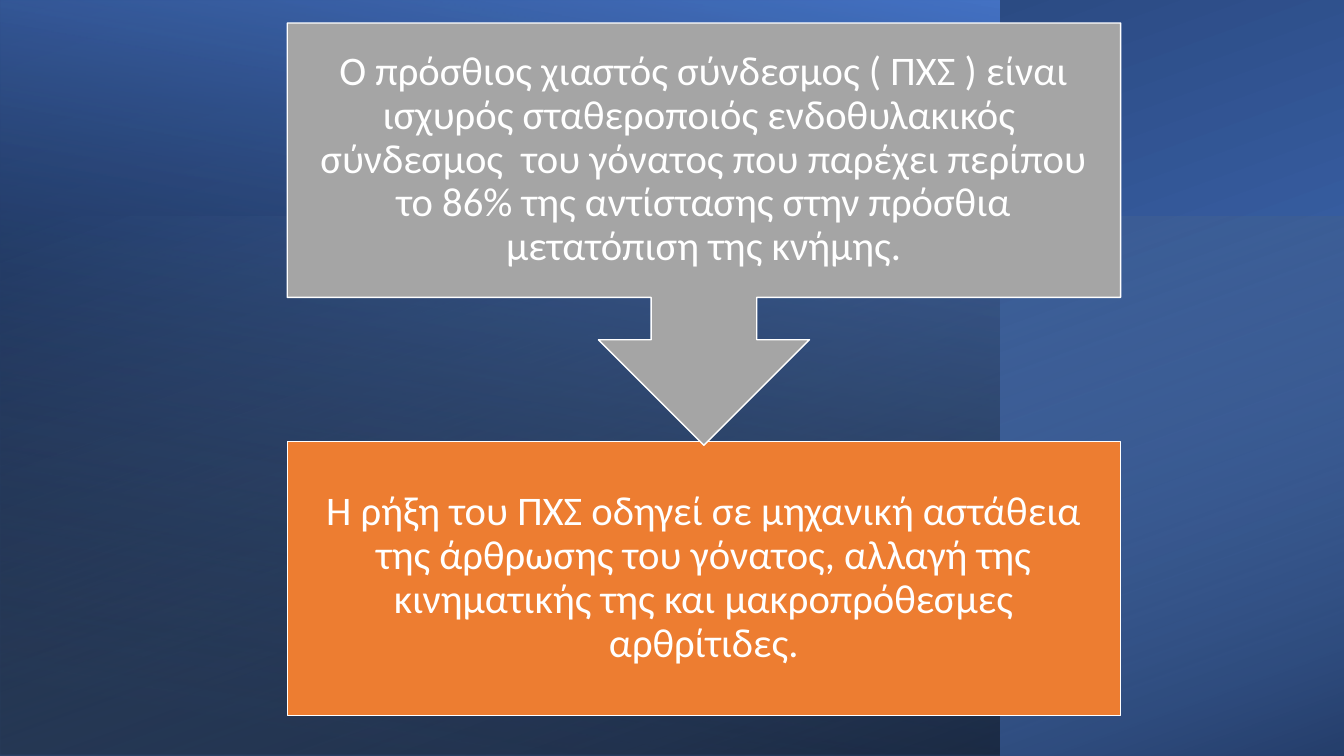
from dataclasses import dataclass

from lxml.etree import SubElement
from pptx import Presentation
from pptx.dml.color import RGBColor
from pptx.enum.shapes import MSO_SHAPE
from pptx.enum.text import MSO_ANCHOR, PP_ALIGN
from pptx.oxml.ns import qn
from pptx.util import Cm, Pt


@dataclass(frozen=True)
class Theme:
    blue: str = "4472C4"
    navy: str = "203864"
    sky: str = "9DC3E6"
    black: str = "000000"
    white: str = "FFFFFF"
    gray: str = "A5A5A5"
    orange: str = "ED7D31"
    font: str = "Calibri"
    size: int = 29
    line: int = 1


THEME = Theme()
WIDE, HIGH = 33.87, 19.05
LEFT, WIDTH, BOX = 7.24, 21, 6.9
TOP, LOW, CALL = 0.58, 11.13, 10.64
INSET = 0.58

CAUSE = (
    "Ο πρόσθιος χιαστός σύνδεσμος ( ΠΧΣ ) είναι ισχυρός σταθεροποιός "
    "ενδοθυλακικός  σύνδεσμος  του γόνατος που παρέχει περίπου το 86% "
    "της αντίστασης στην πρόσθια μετατόπιση της κνήμης."
)
EFFECT = (
    "Η ρήξη του ΠΧΣ οδηγεί σε μηχανική αστάθεια της άρθρωσης του γόνατος, "
    "αλλαγή της κινηματικής της και μακροπρόθεσμες αρθρίτιδες."
)


def color(code):
    return RGBColor.from_string(code)


def add_shape(slide, kind, area, turn=0):
    shape = slide.shapes.add_shape(kind, *map(Cm, area))
    shape.rotation = turn
    shape.shadow.inherit = False
    return shape


def add_panel(slide, area, turn, angle, stops):
    """Add a mirrored gradient panel; stops hold position, colour, opacity in %."""
    panel = add_shape(slide, MSO_SHAPE.RECTANGLE, area, turn)
    panel._element.spPr.xfrm.set("flipH", "1")
    panel.line.fill.background()
    panel.fill.gradient()
    panel.fill.gradient_angle = 360 - angle
    for stop, (place, code, alpha) in zip(panel.fill.gradient_stops, stops):
        stop.position = place / 100
        stop.color.rgb = color(code)
    tints = panel._element.spPr.iter(qn("a:srgbClr"))
    for tint, (place, code, alpha) in zip(tints, stops):
        if alpha < 100:
            SubElement(tint, qn("a:alpha"), val=str(alpha * 1000))


def add_block(slide, kind, top, height, code, turn=0):
    block = add_shape(slide, kind, (LEFT, top, WIDTH, height), turn)
    block.fill.solid()
    block.fill.fore_color.rgb = color(code)
    block.line.color.rgb = color(THEME.white)
    block.line.width = Pt(THEME.line)


def add_text(slide, top, text):
    box = slide.shapes.add_textbox(*map(Cm, (LEFT, top, WIDTH, BOX)))
    frame = box.text_frame
    frame.word_wrap = True
    frame.vertical_anchor = MSO_ANCHOR.MIDDLE
    frame.margin_left = frame.margin_right = Cm(INSET)
    frame.margin_top = frame.margin_bottom = Cm(INSET)
    frame.text = text
    para = frame.paragraphs[0]
    para.alignment = PP_ALIGN.CENTER
    para.line_spacing = 0.9
    font = para.runs[0].font
    font.name = THEME.font
    font.size = Pt(THEME.size)
    font.color.rgb = color(THEME.white)


def add_ground(slide):
    base = ((WIDE - HIGH) / 2, (HIGH - WIDE) / 2, HIGH, WIDE)
    add_panel(slide, base, 270, 200,
              [(8, THEME.blue, 100), (100, THEME.navy, 100)])
    add_panel(slide, (0, 0, 25.2, HIGH), 180, 80,
              [(8, THEME.black, 52), (100, THEME.blue, 100)])
    add_panel(slide, (10.13, -4.67, 13.59, WIDE), 270, 20,
              [(0, THEME.sky, 0), (100, THEME.black, 46)])


def main():
    deck = Presentation()
    deck.slide_width, deck.slide_height = Cm(WIDE), Cm(HIGH)
    slide = deck.slides.add_slide(deck.slide_layouts[6])
    add_ground(slide)
    add_block(slide, MSO_SHAPE.RECTANGLE, LOW, BOX, THEME.orange)
    add_text(slide, LOW, EFFECT)
    add_block(slide, MSO_SHAPE.UP_ARROW_CALLOUT, TOP, CALL, THEME.gray, 180)
    add_text(slide, TOP, CAUSE)
    deck.save("out.pptx")


if __name__ == "__main__":
    main()
